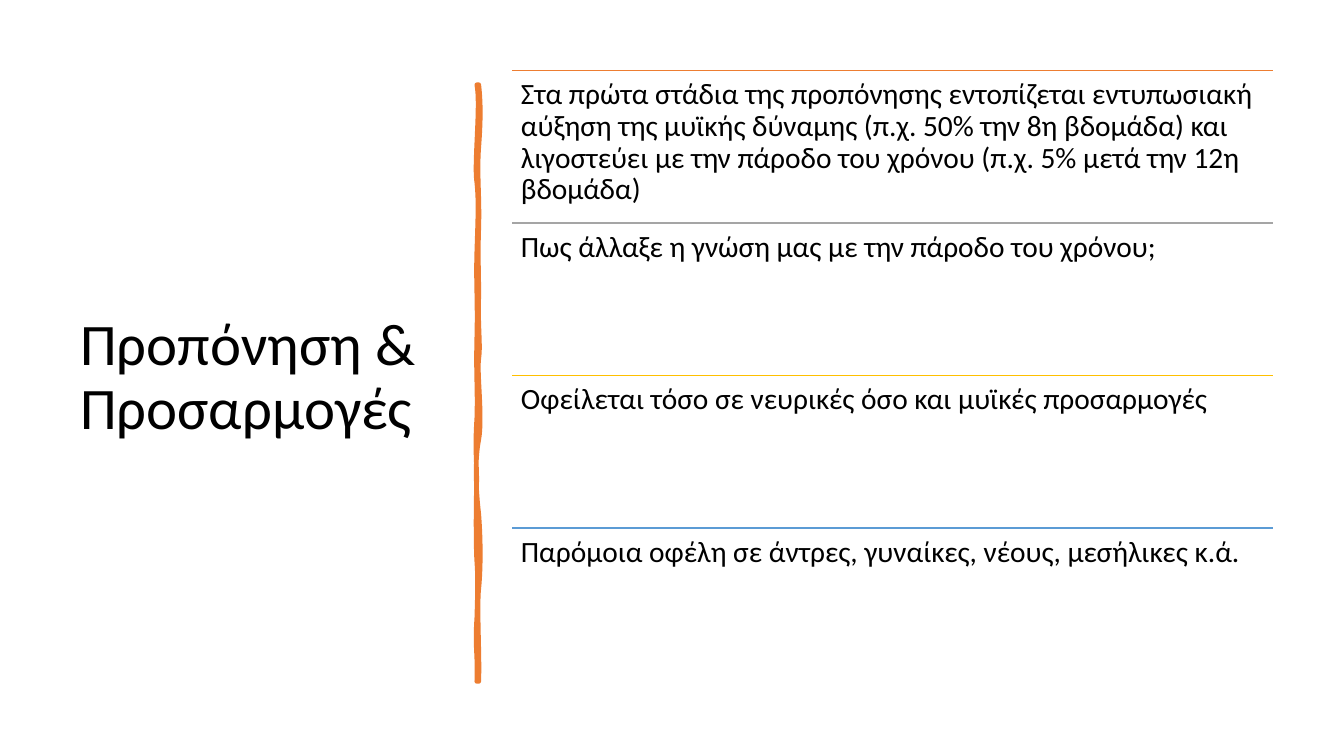
from lxml import etree
from pptx import Presentation
from pptx.dml.color import RGBColor
from pptx.enum.shapes import MSO_CONNECTOR
from pptx.enum.text import MSO_ANCHOR
from pptx.oxml.ns import qn
from pptx.util import Pt

STRAIGHT = MSO_CONNECTOR.STRAIGHT
TOP, MIDDLE = MSO_ANCHOR.TOP, MSO_ANCHOR.MIDDLE
ORANGE = "ED7D31"
BRUSH_UNIT = Pt(0.72)
ROW_LEFT, ROW_TOP, ROW_WIDTH, ROW_HEIGHT = 365.8, 50.3, 543.6, 108.96

ROWS = [
    (ORANGE, "Στα πρώτα στάδια της προπόνησης εντοπίζεται εντυπωσιακή αύξηση "
             "της μυϊκής δύναμης (π.χ. 50% την 8η βδομάδα) και λιγοστεύει με "
             "την πάροδο του χρόνου (π.χ. 5% μετά την 12η βδομάδα)"),
    ("A5A5A5", "Πως άλλαξε η γνώση μας με την πάροδο του χρόνου;"),
    ("FFC000", "Οφείλεται τόσο σε νευρικές όσο και μυϊκές προσαρμογές"),
    ("5B9BD5", "Παρόμοια οφέλη σε άντρες, γυναίκες, νέους, μεσήλικες κ.ά."),
]

BRUSH_LEFT, BRUSH_TOP = 473, 84
BRUSH_START = (475, 84)
BRUSH_EDGE = [
    (477, 102, 477, 119, 475, 146), (473, 173, 476, 195, 475, 226),
    (474, 257, 475, 262, 475, 294), (474, 325, 477, 342, 475, 356),
    (473, 370, 479, 414, 475, 436), (471, 457, 472, 484, 475, 510),
    (477, 536, 477, 564, 475, 584), (473, 603, 476, 650, 475, 676),
    (474, 676, 473, 676, 473, 676), (474, 646, 471, 644, 473, 613),
    (474, 583, 474, 570, 473, 557), (472, 544, 472, 495, 473, 477),
    (473, 459, 471, 445, 473, 415), (474, 386, 472, 373, 473, 335),
    (474, 298, 472, 281, 473, 250), (474, 218, 475, 200, 473, 181),
    (470, 163, 477, 104, 473, 84), (474, 84, 474, 84, 475, 84),
]
BRUSH_BODY = [
    (475, 115, 472, 125, 475, 152), (477, 179, 474, 197, 475, 208),
    (476, 220, 474, 255, 475, 294), (476, 333, 473, 343, 475, 362),
    (477, 381, 477, 397, 475, 430), (472, 463, 475, 474, 475, 516),
    (475, 557, 474, 553, 475, 578), (476, 603, 474, 647, 475, 676),
    (474, 675, 473, 675, 473, 676), (470, 649, 474, 632, 473, 613),
    (472, 595, 475, 569, 473, 539), (471, 510, 476, 500, 473, 471),
    (470, 442, 477, 420, 473, 386), (469, 351, 474, 325, 473, 300),
    (471, 275, 471, 259, 473, 238), (474, 216, 474, 185, 473, 164),
    (471, 143, 475, 121, 473, 84), (474, 84, 474, 84, 475, 84),
]


def rgb(value):
    return RGBColor.from_string(value)


def add_text(s, text, left, top, width, height, size=21, inset=6.3, anchor=TOP):
    tf = s.shapes.add_textbox(Pt(left), Pt(top), Pt(width), Pt(height)).text_frame
    tf.word_wrap = True
    tf.vertical_anchor = anchor
    tf.margin_left = tf.margin_right = Pt(inset)
    tf.margin_top = tf.margin_bottom = Pt(inset)
    p = tf.paragraphs[0]
    p.line_spacing = 0.9
    r = p.add_run()
    r.text = text
    r.font.size = Pt(size)
    r.font.name = "Calibri"
    r.font.color.rgb = rgb("000000")


def add_rule(s, left, top, width, color):
    line = s.shapes.add_connector(
        STRAIGHT, Pt(left), Pt(top), Pt(left + width), Pt(top))
    line.line.color.rgb = rgb(color)
    line.line.width = Pt(1)
    etree.SubElement(line._element.spPr, qn("a:effectLst"))


def add_point(parent, x, y):
    etree.SubElement(parent, qn("a:pt"),
                     x=str(x - BRUSH_LEFT), y=str(y - BRUSH_TOP))


def add_curved_path(path_list, size, curves, **paint):
    path = etree.SubElement(path_list, qn("a:path"), **size, **paint)
    add_point(etree.SubElement(path, qn("a:moveTo")), *BRUSH_START)
    for curve in curves:
        bezier = etree.SubElement(path, qn("a:cubicBezTo"))
        for i in range(0, 6, 2):
            add_point(bezier, *curve[i:i + 2])
    etree.SubElement(path, qn("a:close"))


def add_brush_stroke(s):
    builder = s.shapes.build_freeform(*BRUSH_START, scale=BRUSH_UNIT)
    builder.add_line_segments([curve[4:] for curve in BRUSH_EDGE])
    sp = builder.convert_to_shape()
    sp.shadow.inherit = False
    sp.fill.solid()
    sp.fill.fore_color.rgb = rgb(ORANGE)
    sp.line.color.rgb = rgb(ORANGE)
    sp.line.width = Pt(3.25)
    etree.SubElement(sp.line._get_or_add_ln(), qn("a:round"))
    path_list = sp._element.spPr.find(".//" + qn("a:pathLst"))
    straight = path_list[0]
    size = {"w": straight.get("w"), "h": straight.get("h")}
    path_list.remove(straight)
    add_curved_path(path_list, size, BRUSH_EDGE, fill="none")
    add_curved_path(path_list, size, BRUSH_BODY, stroke="0")


def main():
    prs = Presentation()
    prs.slide_width, prs.slide_height = Pt(960), Pt(540)
    s = prs.slides.add_slide(prs.slide_layouts[6])
    add_text(s, "Προπόνηση & Προσαρμογές", 50.2, 50.4, 269.3, 440,
             size=42, inset=7.2, anchor=MIDDLE)
    add_brush_stroke(s)
    for i, (color, text) in enumerate(ROWS):
        top = ROW_TOP + i * ROW_HEIGHT
        add_rule(s, ROW_LEFT, top, ROW_WIDTH, color)
        add_text(s, text, ROW_LEFT, top, ROW_WIDTH, ROW_HEIGHT)
    prs.save("out.pptx")


if __name__ == "__main__":
    main()
